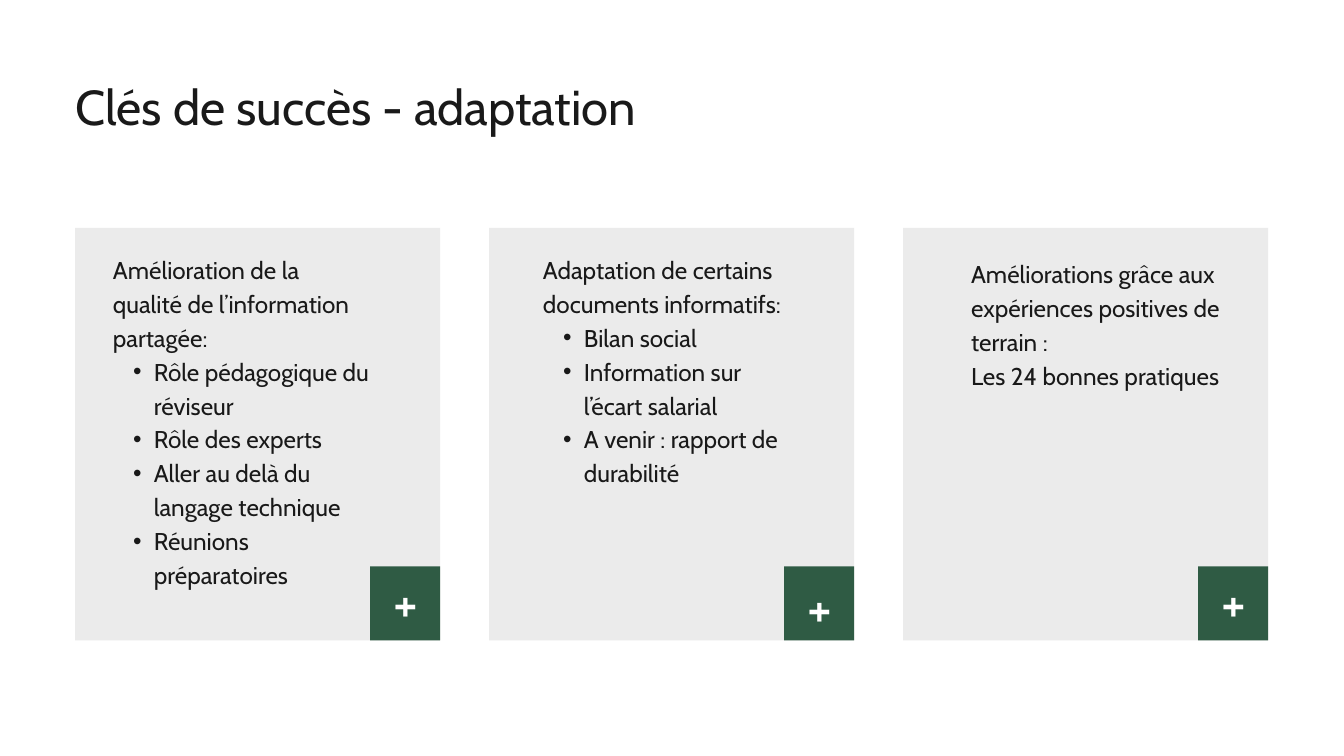
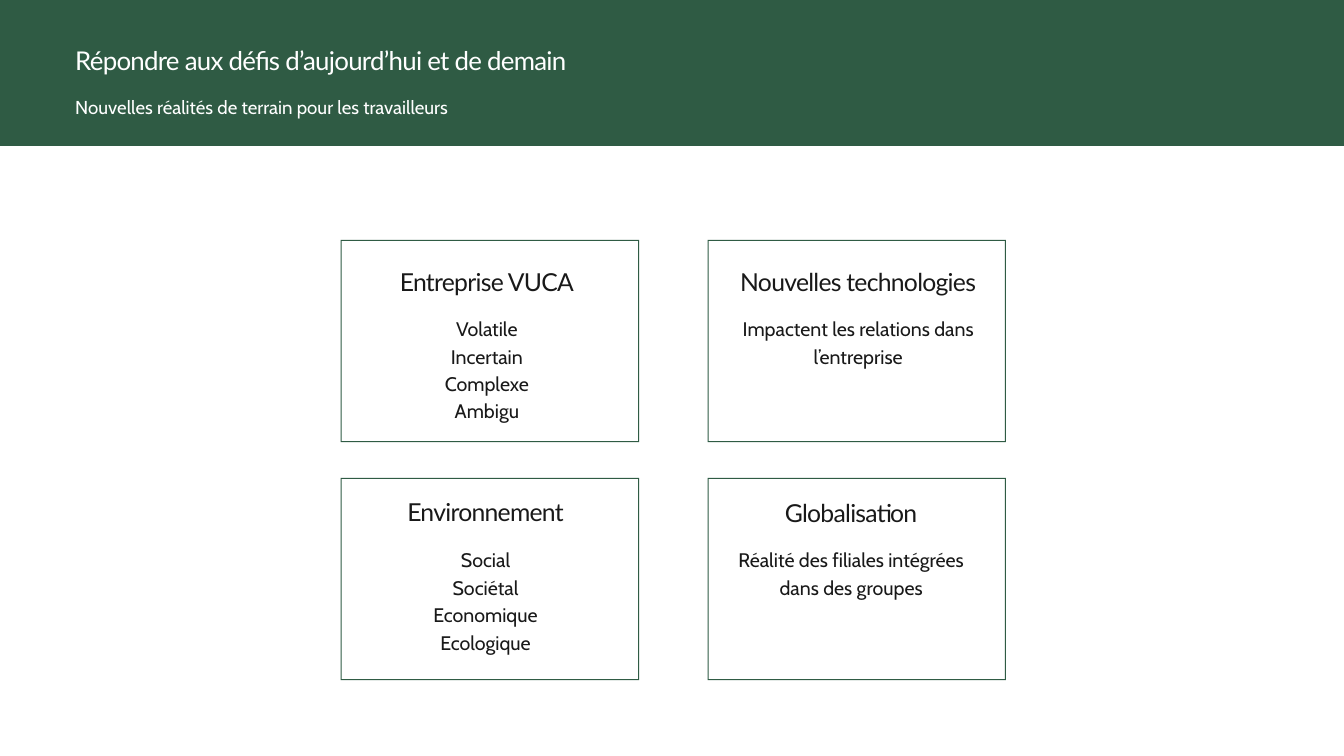
from lxml.etree import SubElement
from pptx import Presentation
from pptx.dml.color import RGBColor
from pptx.enum.shapes import MSO_SHAPE
from pptx.enum.text import MSO_AUTO_SIZE, PP_ALIGN
from pptx.oxml.ns import qn
from pptx.util import Inches, Pt

GREEN, GREY, INK, WHITE = "2F5B44", "EBEBEB", "191919", "FFFFFF"
MARGIN = 1.12

# name: (font, size, line spacing, colour, letter spacing, alignment)
STYLES = {
    "title": ("Cabin", 52.5, 68.2, INK, 0, PP_ALIGN.LEFT),
    "card": ("Cabin", 26, 36.4, INK, 0, PP_ALIGN.LEFT),
    "plus": ("Cabin", 57.2, 80.1, WHITE, 0, PP_ALIGN.CENTER),
    "band title": ("Lato", 27.7, 36.1, WHITE, -0.8, PP_ALIGN.LEFT),
    "band subtitle": ("Cabin", 20, 28, WHITE, 0, PP_ALIGN.LEFT),
    "heading": ("Lato", 26.5, 34.4, INK, -0.8, PP_ALIGN.CENTER),
    "body": ("Cabin", 21, 29.4, INK, 0, PP_ALIGN.CENTER),
}

CARD_LEFT, CARD_TOP, CARD_WIDTH, CARD_HEIGHT, CARD_STEP = MARGIN, 3.39, 5.43, 6.14, 6.16
BADGE_WIDTH, BADGE_HEIGHT = 1.04, 1.1
# text left, text top, text height, plus top, plain paragraphs, bullets
CARDS = [
    (1.68, 3.72, 6.49, 8.31, ["Amélioration de la qualité de l’information partagée:"],
     ["Rôle pédagogique du réviseur", "Rôle des experts",
      "Aller au delà du langage technique", "Réunions préparatoires"]),
    (8.08, 3.72, 4.49, 8.38, ["Adaptation de certains documents informatifs:"],
     ["Bilan social", "Information sur l’écart salarial", "A venir : rapport de durabilité"]),
    (14.45, 3.79, 2.49, 8.31, ["Améliorations grâce aux expériences positives de terrain :",
                               "Les 24 bonnes pratiques"], []),
]

FRAME_LEFT, FRAME_TOP, FRAME_WIDTH, FRAME_HEIGHT = 5.07, 3.57, 4.44, 3.01
FRAME_STEP_X, FRAME_STEP_Y, FRAME_LINE = 5.46, 3.54, 0.015
HEADING_WIDTH, BODY_WIDTH = 6.15, 3.59
# text centre, heading top, body top, body height, heading, body lines
CHALLENGES = [
    (7.245, 3.93, 4.66, 1.61, "Entreprise VUCA", ["Volatile", "Incertain", "Complexe", "Ambigu"]),
    (12.77, 3.93, 4.66, 0.8, "Nouvelles technologies",
     ["Impactent les relations dans l’entreprise"]),
    (7.225, 7.36, 8.1, 1.61, "Environnement",
     ["Social", "Sociétal", "Economique", "Ecologique"]),
    (12.665, 7.37, 8.1, 1.2, "Globalisation",
     ["Réalité des filiales intégrées dans des groupes"]),
]


def rgb(code):
    return RGBColor.from_string(code)


def paint(shape, colour):
    shape.shadow.inherit = False
    shape.fill.solid()
    shape.fill.fore_color.rgb = rgb(colour)
    shape.line.fill.background()


def add_block(page, left, top, width, height, colour):
    block = page.shapes.add_shape(
        MSO_SHAPE.RECTANGLE, Inches(left), Inches(top), Inches(width), Inches(height))
    paint(block, colour)


def add_frame(page, left, top, width, height):
    """Draw a thin hollow frame as one outline inside another."""
    right, bottom = left + width, top + height
    outer = [(left, top), (left, bottom), (right, bottom), (right, top)]
    left, top = left + FRAME_LINE, top + FRAME_LINE
    right, bottom = right - FRAME_LINE, bottom - FRAME_LINE
    inner = [(right, bottom), (left, bottom), (left, top), (right, top)]
    outer, inner = ([(Inches(x), Inches(y)) for x, y in ring] for ring in (outer, inner))
    builder = page.shapes.build_freeform(*outer[0])
    builder.add_line_segments(outer[1:], close=True)
    builder.move_to(*inner[0])
    builder.add_line_segments(inner[1:], close=True)
    paint(builder.convert_to_shape(), GREEN)


def add_bullet(para):
    para.level = 1
    properties = para._p.get_or_add_pPr()
    properties.set("marL", str(Inches(0.61)))
    properties.set("indent", str(Inches(-0.31)))
    SubElement(properties, qn("a:buFont")).set("typeface", "Arial")
    SubElement(properties, qn("a:buChar")).set("char", "•")


def add_text(page, left, top, width, height, style, lines, bullets=()):
    font, size, line_spacing, colour, letter_spacing, alignment = STYLES[style]
    box = page.shapes.add_textbox(Inches(left), Inches(top), Inches(width), Inches(height))
    frame = box.text_frame
    frame.word_wrap = True
    frame.auto_size = MSO_AUTO_SIZE.SHAPE_TO_FIT_TEXT
    frame.margin_left = frame.margin_top = frame.margin_right = frame.margin_bottom = 0
    for index, line in enumerate([*lines, *bullets]):
        para = frame.add_paragraph() if index else frame.paragraphs[0]
        para.alignment = alignment
        para.line_spacing = Pt(line_spacing)
        if index >= len(lines):
            add_bullet(para)
        span = para.add_run()
        span.text = line
        span.font.name = font
        span.font.size = Pt(size)
        span.font.color.rgb = rgb(colour)
        if letter_spacing:
            span.font._element.set("spc", str(round(letter_spacing * 100)))


def add_page(deck):
    page = deck.slides.add_slide(deck.slide_layouts[6])
    page.background.fill.solid()
    page.background.fill.fore_color.rgb = rgb(WHITE)
    return page


def build_success_keys(deck):
    page = add_page(deck)
    add_text(page, MARGIN, 1.07, 11.59, 0.93, "title", ["Clés de succès - adaptation"])
    for column, (text_left, text_top, text_height, plus_top, lines, bullets) in enumerate(CARDS):
        left = CARD_LEFT + column * CARD_STEP
        badge_left = left + CARD_WIDTH - BADGE_WIDTH
        badge_top = CARD_TOP + CARD_HEIGHT - BADGE_HEIGHT
        add_block(page, left, CARD_TOP, CARD_WIDTH, CARD_HEIGHT, GREY)
        add_block(page, badge_left, badge_top, BADGE_WIDTH, BADGE_HEIGHT, GREEN)
        add_text(page, text_left, text_top, 3.83, text_height, "card", lines, bullets)
        add_text(page, badge_left + 0.3, plus_top, 0.45, 1.07, "plus", ["+"])


def build_challenges(deck):
    page = add_page(deck)
    add_block(page, 0, 0, 20, 2.17, GREEN)
    add_text(page, MARGIN, 0.63, 9.36, 0.48, "band title",
             ["Répondre aux défis d’aujourd’hui et de demain"])
    add_text(page, MARGIN, 1.37, 9.36, 0.36, "band subtitle",
             ["Nouvelles réalités de terrain pour les travailleurs"])
    for index, (centre, heading_top, body_top, body_height, heading, lines) in enumerate(CHALLENGES):
        row, column = divmod(index, 2)
        add_frame(page, FRAME_LEFT + column * FRAME_STEP_X, FRAME_TOP + row * FRAME_STEP_Y,
                  FRAME_WIDTH, FRAME_HEIGHT)
        add_text(page, centre - HEADING_WIDTH / 2, heading_top, HEADING_WIDTH, 0.46,
                 "heading", [heading])
        add_text(page, centre - BODY_WIDTH / 2, body_top, BODY_WIDTH, body_height, "body", lines)


def main():
    deck = Presentation()
    deck.slide_width, deck.slide_height = Inches(20), Inches(11.25)
    build_success_keys(deck)
    build_challenges(deck)
    deck.save("out.pptx")


if __name__ == "__main__":
    main()
